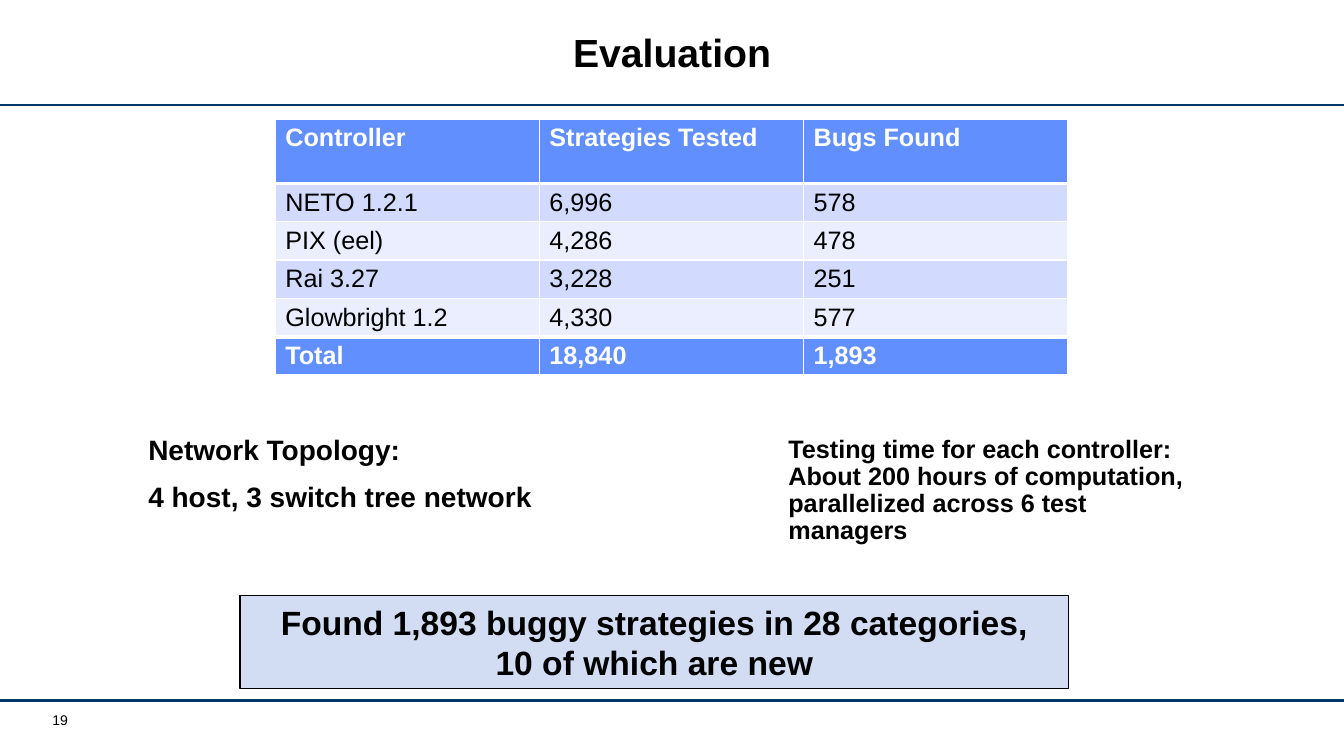
from lxml import etree
from pptx import Presentation
from pptx import util as u
from pptx.dml.color import RGBColor
from pptx.enum import shapes, text
from pptx.oxml import ns

BLACK = RGBColor(0x00, 0x00, 0x00)
WHITE = RGBColor(0xFF, 0xFF, 0xFF)
NAVY = RGBColor(0x00, 0x37, 0x67)
BLUE = RGBColor(0x61, 0x8F, 0xFD)
BAND_DARK = RGBColor(0xD2, 0xDB, 0xFE)
BAND_LIGHT = RGBColor(0xEA, 0xEE, 0xFF)
CALLOUT_FILL = RGBColor(0xD2, 0xDC, 0xF2)

WIDTH, HEIGHT = u.Inches(13.33), u.Inches(7.5)
RESULTS = [
    ("Controller", "Strategies Tested", "Bugs Found"),
    ("NETO 1.2.1", "6,996", "578"),
    ("PIX (eel)", "4,286", "478"),
    ("Rai 3.27", "3,228", "251"),
    ("Glowbright 1.2", "4,330", "577"),
    ("Total", "18,840", "1,893"),
]


def across(percent):
    return round(WIDTH * percent / 100)


def down(percent):
    return round(HEIGHT * percent / 100)


def box(x, y, w, h):
    """Turn percentages of the slide into left, top, width, height."""
    return across(x), down(y), across(w), down(h)


def write(tf, *lines, size=18, bold=True, color=BLACK, align=None,
          spacing=None, before=0, anchor=None, insets=None):
    """Fill a text frame with one formatted paragraph per line."""
    tf.word_wrap = True
    tf.auto_size = text.MSO_AUTO_SIZE.NONE
    if anchor is not None:
        tf.vertical_anchor = anchor
    if insets:
        tf.margin_left, tf.margin_top, tf.margin_right, tf.margin_bottom = (
            u.Inches(i) for i in insets)
    for i, line in enumerate(lines):
        p = tf.paragraphs[0] if i == 0 else tf.add_paragraph()
        p.alignment = align
        p.line_spacing = spacing
        p.space_before = u.Pt(before)
        r = p.add_run()
        r.text = line
        r.font.name = "Arial"
        r.font.size = u.Pt(size)
        r.font.bold = bold
        r.font.color.rgb = color


def place(sp, x, y, w, h):
    sp.left, sp.top, sp.width, sp.height = box(x, y, w, h)


def fill_body(sp, bounds, *lines, **fmt):
    """Move a body placeholder and write its lines without bullets."""
    place(sp, *bounds)
    write(sp.text_frame, *lines, spacing=0.9,
          anchor=text.MSO_ANCHOR.TOP, **fmt)
    for p in sp.text_frame.paragraphs:
        pPr = p._p.get_or_add_pPr()
        pPr.set("marL", "0")
        pPr.set("indent", "0")
        etree.SubElement(pPr, ns.qn("a:buNone"))


def add_rule(s, y):
    line = s.shapes.add_connector(shapes.MSO_CONNECTOR.STRAIGHT,
                                  0, down(y), WIDTH, down(y))
    line.line.color.rgb = NAVY
    line.line.width = u.Pt(1.75)
    etree.SubElement(line._element.spPr, ns.qn("a:effectLst"))


def set_borders(cell, top, bottom):
    """Give a cell white borders; only top and bottom vary in points."""
    tcPr = cell._tc.get_or_add_tcPr()
    widths = {"lnL": 1, "lnR": 1, "lnT": top, "lnB": bottom}
    for i, (tag, width) in enumerate(widths.items()):
        ln = etree.Element(ns.qn(f"a:{tag}"), w=str(u.Pt(width)))
        fill = etree.SubElement(ln, ns.qn("a:solidFill"))
        etree.SubElement(fill, ns.qn("a:srgbClr"), val=str(WHITE))
        tcPr.insert(i, ln)


def add_results(s, x, y, w, head_height, row_height):
    last = len(RESULTS) - 1
    bounds = box(x, y, w, head_height + last * row_height)
    table = s.shapes.add_table(len(RESULTS), len(RESULTS[0]), *bounds).table
    for i, row in enumerate(RESULTS):
        strong = i in (0, last)
        table.rows[i].height = down(head_height if i == 0 else row_height)
        band = BLUE if strong else BAND_DARK if i % 2 else BAND_LIGHT
        for j, value in enumerate(row):
            cell = table.cell(i, j)
            cell.fill.solid()
            cell.fill.fore_color.rgb = band
            set_borders(cell, top=3 if i in (1, last) else 1,
                        bottom=3 if i in (0, last - 1) else 1)
            write(cell.text_frame, value, bold=strong,
                  color=WHITE if strong else BLACK)


def add_callout(s, bounds, message):
    sp = s.shapes.add_shape(shapes.MSO_SHAPE.RECTANGLE, *box(*bounds))
    sp.shadow.inherit = False
    sp.fill.solid()
    sp.fill.fore_color.rgb = CALLOUT_FILL
    sp.line.color.rgb = BLACK
    sp.line.width = u.Pt(1)
    write(sp.text_frame, message, size=24, align=text.PP_ALIGN.CENTER,
          anchor=text.MSO_ANCHOR.MIDDLE, insets=(0.2, 0.05, 0.2, 0.05))


def main():
    prs = Presentation()
    prs.slide_width, prs.slide_height = WIDTH, HEIGHT
    s = prs.slides.add_slide(prs.slide_layouts.get_by_name("Two Content"))
    title, topology, timing = s.placeholders

    for y in (13.87, 92.67):
        add_rule(s, y)
    number = s.shapes.add_textbox(*box(3.53, 94.13, 11.93, 3.2))
    write(number.text_frame, "19", size=10, bold=False, insets=(0.05, 0, 0, 0))

    place(title, 10.28, 1.47, 79.44, 11.87)
    write(title.text_frame, "Evaluation", size=28, spacing=u.Pt(28),
          align=text.PP_ALIGN.CENTER, anchor=text.MSO_ANCHOR.MIDDLE)
    fill_body(topology, (10.28, 57.07, 36.53, 15.73),
              "Network Topology:", "4 host, 3 switch tree network",
              size=20, before=12)
    fill_body(timing, (57.91, 57.07, 31.81, 15.73),
              "Testing time for each controller:",
              "About 200 hours of computation, parallelized across 6 test managers")
    add_results(s, 20.48, 15.73, 58.96, head_height=8.53, row_height=4.93)
    add_callout(s, (17.85, 78.8, 61.67, 12.27),
                "Found 1,893 buggy strategies in 28 categories, 10 of which are new")
    prs.save("out.pptx")


if __name__ == "__main__":
    main()
